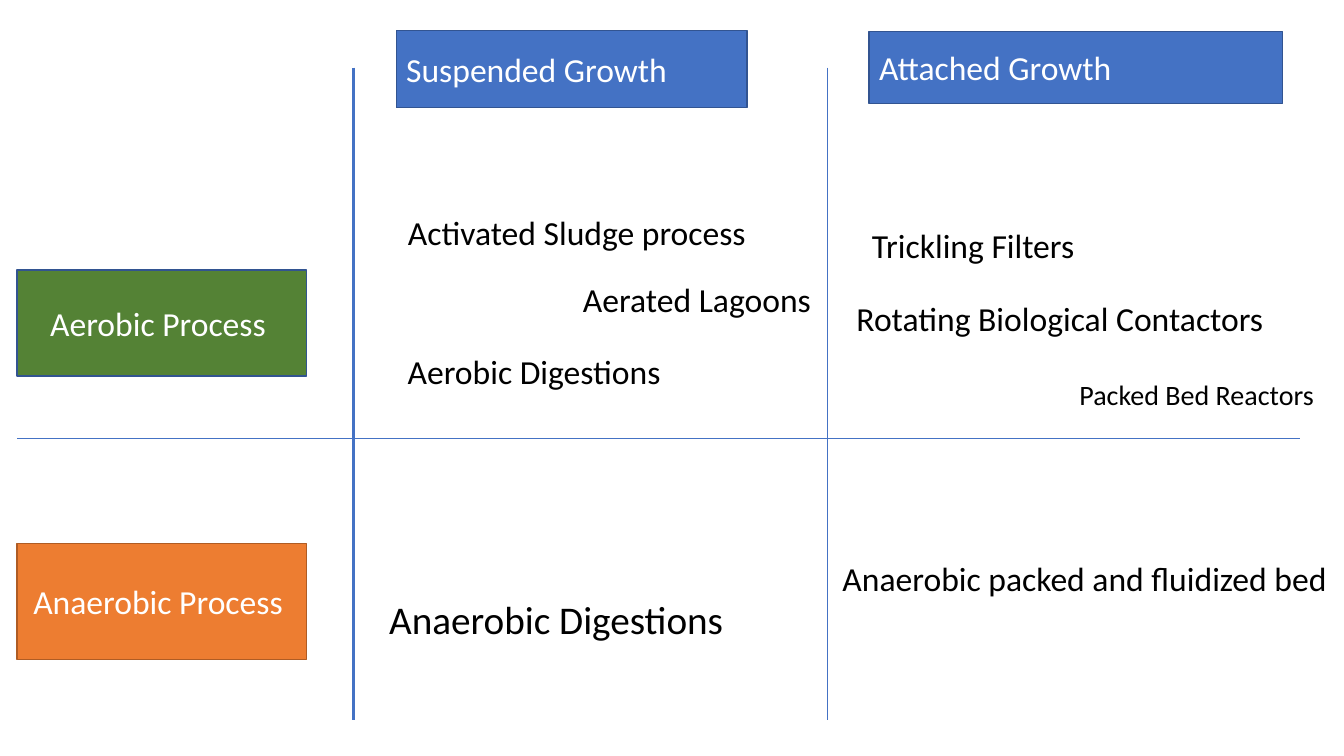
from lxml import etree
from pptx import Presentation
from pptx.dml.color import RGBColor
from pptx.enum.shapes import MSO_CONNECTOR as Line, MSO_SHAPE as Shape
from pptx.enum.text import MSO_ANCHOR as Anchor, MSO_AUTO_SIZE as Fit, PP_ALIGN as Align
from pptx.oxml.ns import qn
from pptx.util import Pt

PX = 9144  # 100 px to the inch


def color(code):
    return RGBColor.from_string(code)


def write(shape, text, size, code, align, form):
    frame = shape.text_frame
    for key, val in form.items():
        setattr(frame, key, val)
    par = frame.paragraphs[0]
    par.text = text
    par.alignment = align
    for key, val in {"name": "Calibri", "size": Pt(size)}.items():
        setattr(par.font, key, val)
    par.font.color.rgb = color(code)


deck = Presentation()
deck.slide_width, deck.slide_height = 1333 * PX, 750 * PX
slide = deck.slides.add_slide(deck.slide_layouts[6])
shapes = slide.shapes

# Column and row headings
heads = [
    ("Suspended Growth", (393, 30, 348, 77), "4472C4", "325491", Align.LEFT),
    ("Aerobic Process ", (17, 268, 287, 105), "548235", "325491", Align.CENTER),
    ("Anaerobic Process ", (17, 539, 287, 115), "ED7D31", "AF5C24", Align.CENTER),
    ("Attached Growth", (862, 31, 410, 72), "4472C4", "325491", Align.LEFT),
]
for text, place, fill, edge, align in heads:
    box = shapes.add_shape(Shape.RECTANGLE, *[n * PX for n in place])
    box.shadow.inherit = False
    box.fill.solid()
    box.fill.fore_color.rgb = color(fill)
    box.line.color.rgb = color(edge)
    box.line.width = Pt(1)
    write(box, text, 24, "FFFFFF", align,
          {"vertical_anchor": Anchor.MIDDLE, "word_wrap": True})

# Grid lines
rules = [
    ((17, 435, 1289, 435), 0.5),
    ((821, 67, 821, 714), 0.5),
    ((351, 67, 351, 714), 2.25),
]
for ends, width in rules:
    rule = shapes.add_connector(Line.STRAIGHT, *[n * PX for n in ends])
    rule.line.color.rgb = color("4472C4")
    rule.line.width = Pt(width)
    etree.SubElement(rule._element.spPr, qn("a:effectLst"))

# Treatment methods in the grid
items = [
    ("Activated Sludge process ", (393, 205, 366, 50), 24),
    ("Aerated Lagoons ", (567, 272, 256, 50), 24),
    ("Aerobic Digestions ", (393, 343, 281, 50), 24),
    ("Trickling Filters ", (854, 218, 230, 50), 24),
    ("Rotating Biological Contactors ", (838, 291, 434, 50), 24),
    ("Packed Bed Reactors ", (1059, 370, 262, 44), 20),
    ("Anaerobic Digestions ", (374, 586, 364, 57), 28),
    ("Anaerobic packed and fluidized bed ", (823, 549, 513, 50), 24),
]
for text, place, size in items:
    label = shapes.add_textbox(*[n * PX for n in place])
    write(label, text, size, "000000", Align.CENTER,
          {"word_wrap": False, "auto_size": Fit.SHAPE_TO_FIT_TEXT})

deck.save("out.pptx")
